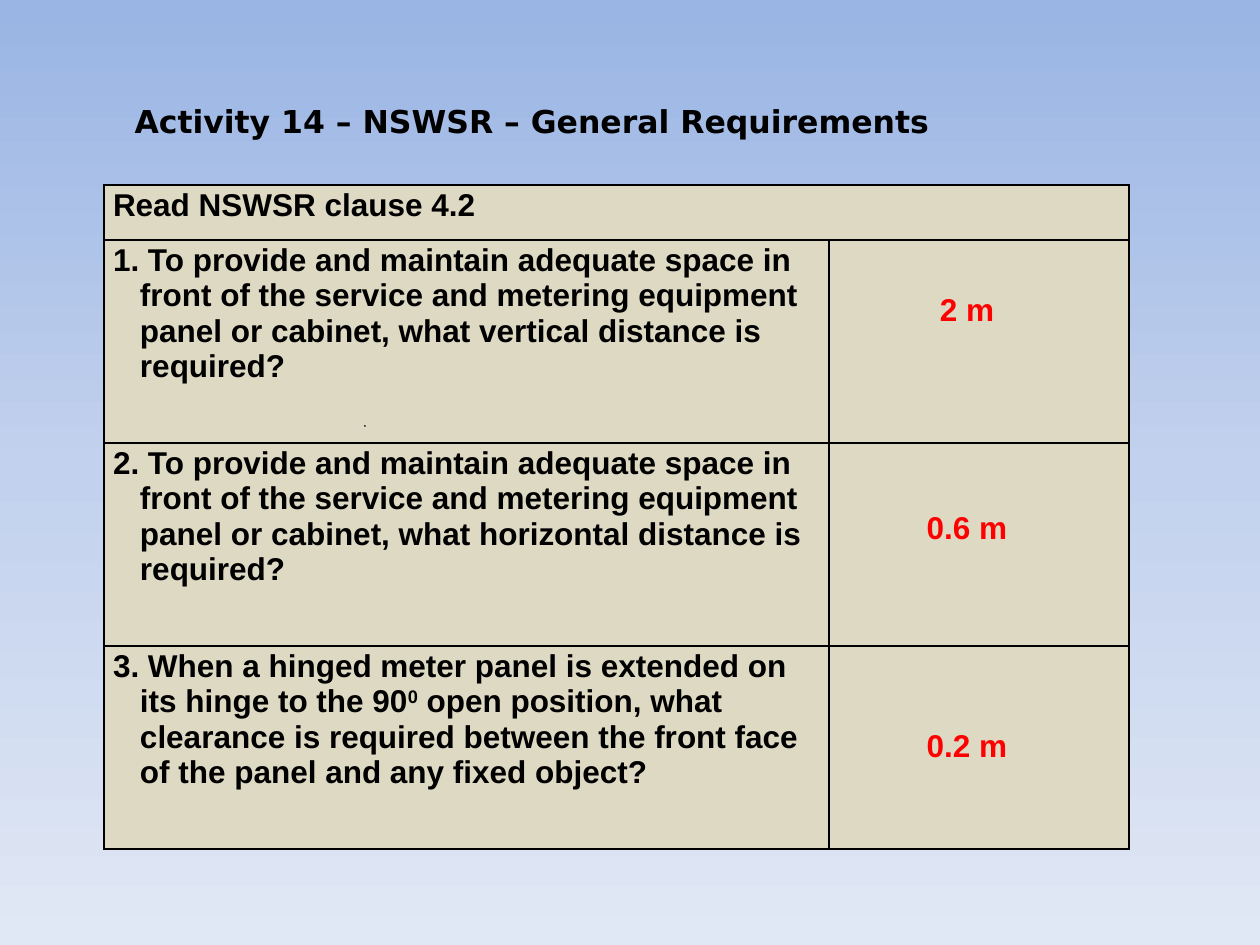
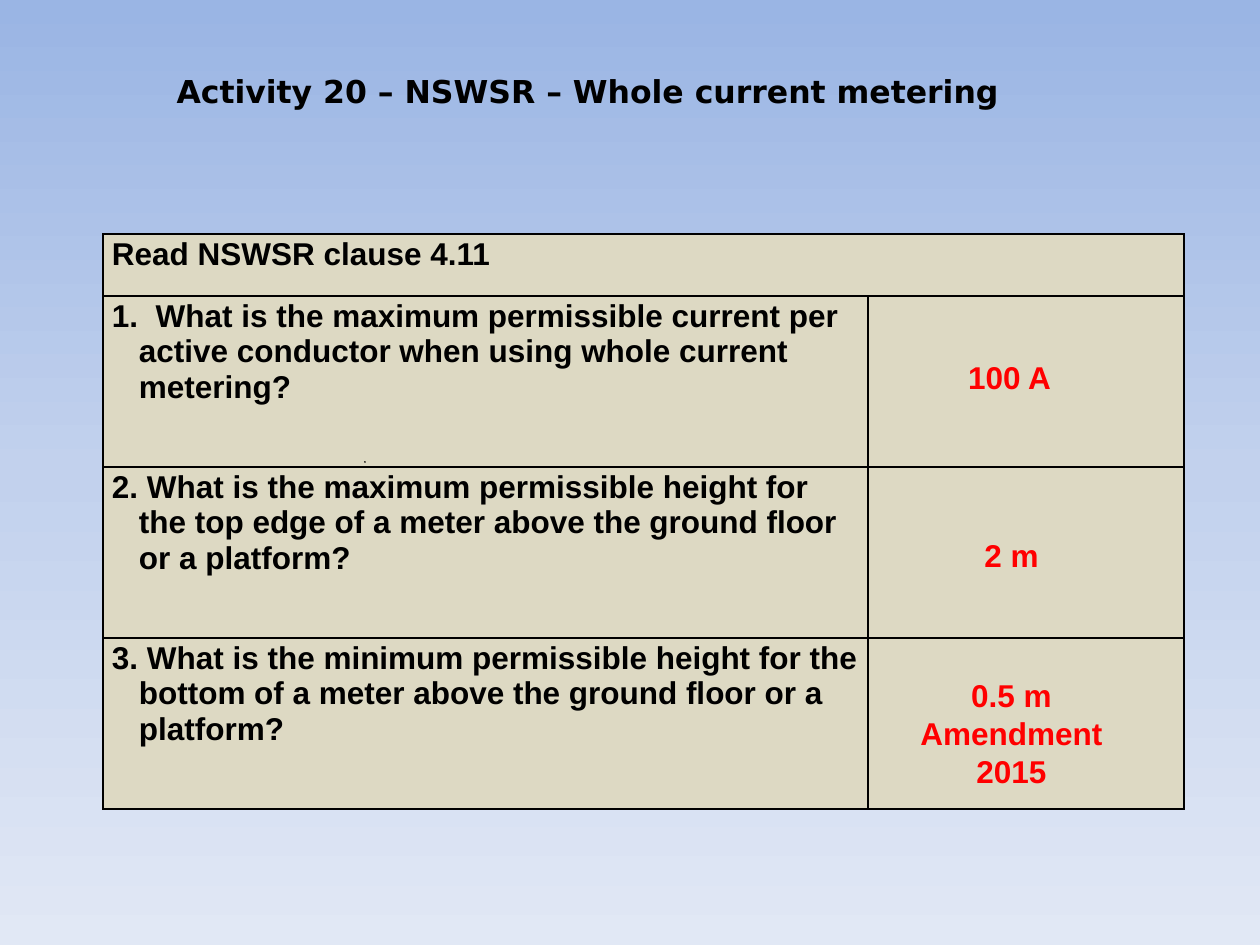
from copy import deepcopy
from dataclasses import dataclass

from lxml.etree import SubElement
from pptx import Presentation
from pptx.dml.color import RGBColor
from pptx.enum.shapes import MSO_SHAPE
from pptx.enum.text import MSO_ANCHOR, MSO_AUTO_SIZE, PP_ALIGN
from pptx.oxml.ns import qn
from pptx.util import Emu, Pt

PX_PER_INCH = 126


def px(length):
    return Emu(round(length * 914400 / PX_PER_INCH))


@dataclass(frozen=True)
class Theme:
    sky: tuple = ((0, "9AB5E4"), (0.5, "C2D1ED"), (1, "E1E8F5"))
    ink: str = "000000"
    answer: str = "FF0000"
    cell: str = "DDD9C3"
    marker: str = "4F81BD"
    title_font: str = "DejaVu Sans"
    body_font: str = "Arial"
    size: int = 18
    border: float = 1
    marker_line: float = 0.75
    space_after: int = 12


class ActivityDeck:
    def __init__(self, theme):
        self.theme = theme
        self.deck = Presentation()
        self.deck.slide_width = px(1260)
        self.deck.slide_height = px(945)
        self.page = None
        self.paint_background()

    def paint_background(self):
        """Give the master a vertical gradient that every page inherits."""
        master = self.deck.slide_master
        fill = master.background.fill
        fill.gradient()
        fill.gradient_angle = 270
        stop_list = master.element.find(".//" + qn("a:gsLst"))
        stop_list.append(deepcopy(stop_list[0]))
        for stop, (position, color) in zip(fill.gradient_stops, self.theme.sky):
            stop.position = position
            stop.color.rgb = RGBColor.from_string(color)

    def span(self, para, text, font, color, raised=False):
        span = para.add_run()
        span.text = text
        span.font.name = font
        span.font.size = Pt(self.theme.size)
        span.font.bold = True
        span.font.color.rgb = RGBColor.from_string(color)
        if raised:
            span.font._element.set("baseline", "30000")

    def add_page(self, title, left, top, width):
        self.page = self.deck.slides.add_slide(self.deck.slide_layouts[5])
        box = self.page.shapes.title
        box.left, box.top, box.width, box.height = map(px, (left, top, width, 50))
        frame = box.text_frame
        frame.word_wrap = True
        frame.auto_size = MSO_AUTO_SIZE.NONE
        frame.vertical_anchor = MSO_ANCHOR.TOP
        para = frame.paragraphs[0]
        para.alignment = PP_ALIGN.LEFT
        self.span(para, title, self.theme.title_font, self.theme.ink)

    def style_cell(self, cell):
        cell.margin_left = cell.margin_right = px(9)
        cell.margin_top = cell.margin_bottom = px(3)
        properties = cell._tc.get_or_add_tcPr()
        for side in ("a:lnL", "a:lnR", "a:lnT", "a:lnB"):
            line = SubElement(properties, qn(side), w=str(Pt(self.theme.border)))
            solid = SubElement(line, qn("a:solidFill"))
            SubElement(solid, qn("a:srgbClr"), val=self.theme.ink)
        cell.fill.solid()
        cell.fill.fore_color.rgb = RGBColor.from_string(self.theme.cell)

    def question_table(self, left, top, columns, header_height, row_height, heading, questions):
        """Questions are lists of (text, raised) parts."""
        heights = [header_height] + [row_height] * len(questions)
        frame = self.page.shapes.add_table(
            len(heights), len(columns), px(left), px(top), px(sum(columns)), px(sum(heights)))
        table = frame.table
        table.first_row = table.horz_banding = False
        for column, width in zip(table.columns, columns):
            column.width = px(width)
        for row, height in zip(table.rows, heights):
            row.height = px(height)
            for cell in row.cells:
                self.style_cell(cell)
        table.cell(0, 0).merge(table.cell(0, 1))
        for index, parts in enumerate([[(heading, False)]] + questions):
            para = table.cell(index, 0).text_frame.paragraphs[0]
            if index:
                para.space_after = Pt(self.theme.space_after)
                properties = para._p.get_or_add_pPr()
                properties.set("marL", str(px(27)))
                properties.set("indent", str(px(-27)))
            for text, raised in parts:
                self.span(para, text, self.theme.body_font, self.theme.ink, raised)

    def answer(self, left, top, width, *lines, height=50):
        box = self.page.shapes.add_textbox(*map(px, (left, top, width, height)))
        frame = box.text_frame
        frame.word_wrap = True
        for index, line in enumerate(lines):
            para = frame.add_paragraph() if index else frame.paragraphs[0]
            para.alignment = PP_ALIGN.CENTER
            self.span(para, line, self.theme.body_font, self.theme.answer)

    def dot(self, left, top):
        dot = self.page.shapes.add_shape(MSO_SHAPE.RECTANGLE, px(left), px(top), 0, 0)
        dot.shadow.inherit = False
        dot.fill.solid()
        dot.fill.fore_color.rgb = RGBColor.from_string(self.theme.marker)
        dot.line.color.rgb = RGBColor.from_string(self.theme.ink)
        dot.line.width = Pt(self.theme.marker_line)


def general_requirements(show):
    show.add_page("Activity 14 – NSWSR – General Requirements", 122, 96, 935)
    space = ("To provide and maintain adequate space in front of the service and "
             "metering equipment panel or cabinet, what {} distance is required?")
    questions = [[(f"{number}. " + space.format(direction), False)]
                 for number, direction in enumerate(("vertical", "horizontal"), 1)]
    questions.append([
        ("3. When a hinged meter panel is extended on its hinge to the 90", False),
        ("0", True),
        (" open position, what clearance is required between the front face "
         "of the panel and any fixed object?", False),
    ])
    show.question_table(104, 185, (725, 300), 55, 203, "Read NSWSR clause 4.2", questions)
    show.dot(365, 426)
    for index, distance in enumerate(("2 m", "0.6 m", "0.2 m")):
        show.answer(848, 284 + 218 * index, 238, distance)


def whole_current_metering(show):
    show.add_page("Activity 20 – NSWSR – Whole current metering", 164, 66, 960)
    questions = [[(text, False)] for text in (
        "1.  What is the maximum permissible current per active conductor "
        "when using whole current metering?",
        "2. What is the maximum permissible height for the top edge of a meter "
        "above the ground floor or a platform?",
        "3. What is the minimum permissible height for the bottom of a meter "
        "above the ground floor or a platform?",
    )]
    show.question_table(103, 234, (765, 316), 62, 171, "Read NSWSR clause 4.11", questions)
    show.dot(365, 462)
    show.answer(896, 352, 227, "100 A")
    show.answer(898, 530, 227, "2 m")
    show.answer(898, 670, 227, "0.5 m", "Amendment 2015", height=127)


def main():
    show = ActivityDeck(Theme())
    general_requirements(show)
    whole_current_metering(show)
    show.deck.save("out.pptx")


if __name__ == "__main__":
    main()
